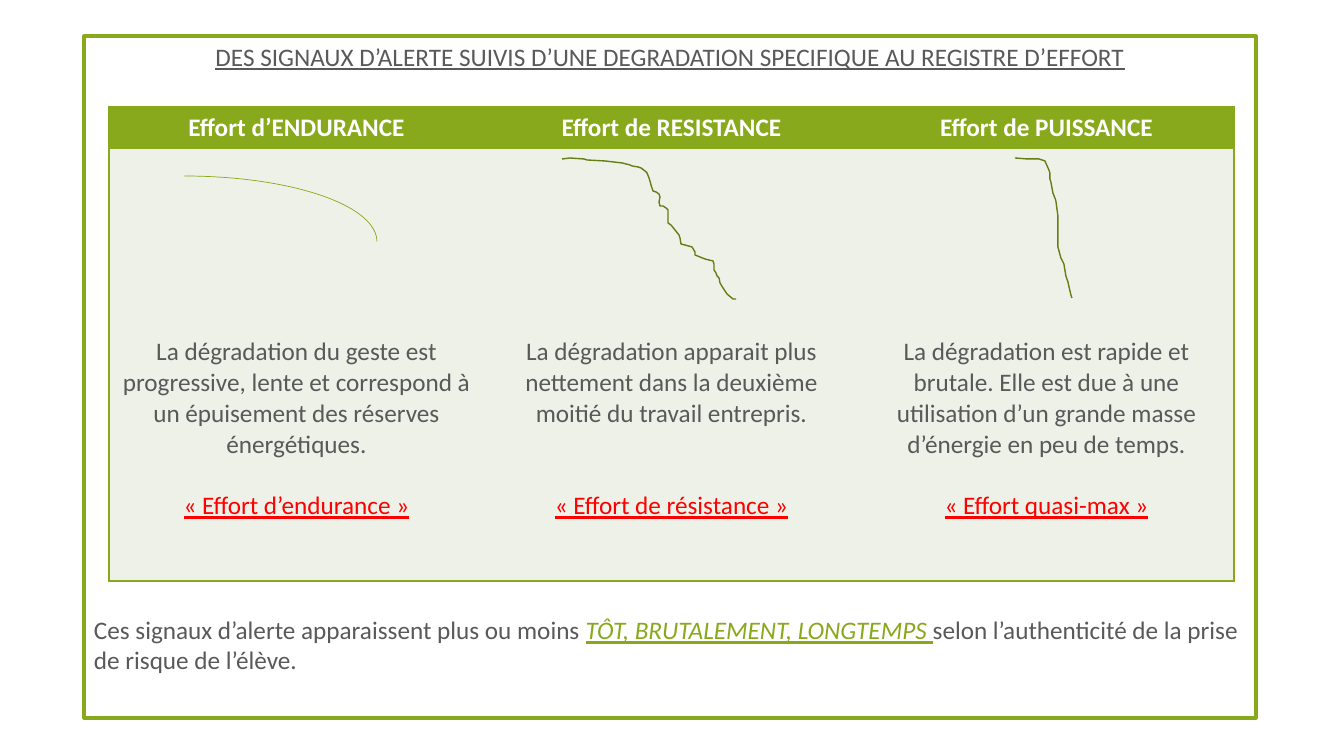
from lxml import etree
from pptx import Presentation
from pptx.dml.color import RGBColor
from pptx.enum.shapes import MSO_SHAPE
from pptx.enum.text import MSO_ANCHOR, PP_ALIGN
from pptx.oxml.ns import qn
from pptx.util import Emu, Pt

RECT, ARC = MSO_SHAPE.RECTANGLE, MSO_SHAPE.ARC
TOP = MSO_ANCHOR.TOP
LEFT, MID = PP_ALIGN.LEFT, PP_ALIGN.CENTER

GREEN = RGBColor(0x87, 0xA9, 0x1B)
DARK = RGBColor(0x64, 0x7D, 0x14)
PALE = RGBColor(0xED, 0xF1, 0xE8)
GREY = RGBColor(0x59, 0x59, 0x59)
RED = RGBColor(0xFF, 0x00, 0x00)
WHITE = RGBColor(0xFF, 0xFF, 0xFF)

SCALE = 914400 / 100.8
FRAME = (84, 36, 1172, 682)
GRID = (109, 107, 1125, 474)
HEAD = 41

TITLE = "DES SIGNAUX D’ALERTE SUIVIS D’UNE DEGRADATION SPECIFIQUE AU REGISTRE D’EFFORT"
CLOSE = ("Ces signaux d’alerte apparaissent plus ou moins ",
         "TÔT, BRUTALEMENT, LONGTEMPS ",
         "selon l’authenticité de la prise de risque de l’élève.")

# Heading, description, label, points between description and label
EFFORTS = [
    ("Effort d’ENDURANCE",
     "La dégradation du geste est progressive, lente et correspond à un "
     "épuisement des réserves énergétiques.",
     "« Effort d’endurance »", 22),
    ("Effort de RESISTANCE",
     "La dégradation apparait plus nettement dans la deuxième moitié du "
     "travail entrepris.",
     "« Effort de résistance »", 44),
    ("Effort de PUISSANCE",
     "La dégradation est rapide et brutale. Elle est due à une utilisation "
     "d’un grande masse d’énergie en peu de temps.",
     "« Effort quasi-max »", 22),
]

# Curve points, from the top left corner of each curve
STEPS = [
    (0, 1), (8, 0), (22, 1), (25, 2), (43, 3), (60, 5), (68, 7), (70, 8),
    (76, 9), (79, 10), (83, 13), (85, 15), (87, 20), (88, 23), (89, 27),
    (91, 33), (94, 34), (97, 36), (98, 39), (97, 44), (98, 48), (101, 48),
    (104, 50), (106, 52), (106, 58), (106, 65), (109, 67), (113, 72),
    (117, 77), (118, 80), (119, 86), (123, 87), (130, 89), (133, 94),
    (133, 97), (143, 101), (151, 103), (152, 106), (152, 112), (154, 115),
    (155, 118), (157, 120), (158, 125), (161, 130), (165, 136), (171, 141),
    (174, 141),
]
DROP = [
    (0, 0), (12, 1), (24, 1), (30, 3), (34, 12), (35, 15), (35, 21), (36, 24),
    (38, 35), (40, 40), (41, 43), (43, 58), (43, 89), (46, 100), (49, 106),
    (50, 112), (51, 118), (53, 124), (56, 137), (57, 140),
]


def px(n):
    return Emu(round(n * SCALE))


def style(run, color, bold=False, under=False, slant=False):
    font = run.font
    font.name, font.size = "Calibri", Pt(18)
    font.color.rgb = color
    font.bold, font.underline, font.italic = bold, under, slant


def trace(shape, color, width):
    shape.shadow.inherit = False
    shape.fill.background()
    shape.line.color.rgb = color
    shape.line.width = Pt(width)


def border(cell, sides):
    props = cell._tc.get_or_add_tcPr()
    for side in "LRTB":
        line = etree.SubElement(props, qn("a:ln" + side), w=str(Pt(1)))
        if side in sides:
            fill = etree.SubElement(line, qn("a:solidFill"))
            etree.SubElement(fill, qn("a:srgbClr"), val=str(GREEN))
        else:
            etree.SubElement(line, qn("a:noFill"))


def add_frame(slide, box):
    frame = slide.shapes.add_shape(RECT, *map(px, box))
    trace(frame, GREEN, 2.25)
    text = frame.text_frame
    text.word_wrap = True
    text.vertical_anchor = TOP
    # Title
    title = text.paragraphs[0]
    title.text = TITLE
    title.alignment = MID
    style(title.runs[0], GREY, under=True)
    # Closing sentence
    end = text.add_paragraph()
    end.alignment = LEFT
    end.space_before = Pt(388)
    for i, part in enumerate(CLOSE):
        run = end.add_run()
        run.text = part
        key = i == 1
        style(run, GREEN if key else GREY, under=key, slant=key)


def add_grid(slide, box):
    table = slide.shapes.add_table(2, len(EFFORTS), *map(px, box)).table
    table.rows[0].height = px(HEAD)
    table.rows[1].height = px(box[3] - HEAD)
    last = len(EFFORTS) - 1
    for i, (name, body, label, gap) in enumerate(EFFORTS):
        sides = "TB" + "L" * (i == 0) + "R" * (i == last)
        head, cell = table.cell(0, i), table.cell(1, i)
        for part, color in ((head, GREEN), (cell, PALE)):
            border(part, sides)
            part.fill.solid()
            part.fill.fore_color.rgb = color
        # Heading
        head.text_frame.text = name
        style(head.text_frame.paragraphs[0].runs[0], WHITE, bold=True)
        # Description and label, below the room for the curve
        cell.margin_top = px(189)
        text = cell.text_frame
        text.text = body
        style(text.paragraphs[0].runs[0], GREY)
        tag = text.add_paragraph()
        tag.text = label
        tag.space_before = Pt(gap)
        style(tag.runs[0], RED, under=True)
        for para in (*head.text_frame.paragraphs, *text.paragraphs):
            para.alignment = MID


def add_curve(slide, x, y, points):
    spots = [(x + dx, y + dy) for dx, dy in points]
    path = slide.shapes.build_freeform(*spots[0], scale=SCALE)
    path.add_line_segments(spots[1:], close=False)
    trace(path.convert_to_shape(), DARK, 1)


def add_curves(slide, box):
    x, y, wide, _ = box
    col, top = wide // len(EFFORTS), y + HEAD
    arc = slide.shapes.add_shape(ARC, px(x - 117), px(top + 28), px(385), px(131))
    trace(arc, GREEN, 0.5)
    add_curve(slide, x + col + 78, top + 10, STEPS)
    add_curve(slide, x + 2 * col + 156, top + 10, DROP)


def main():
    deck = Presentation()
    deck.slide_width, deck.slide_height = px(1344), px(756)
    slide = deck.slides.add_slide(deck.slide_layouts[6])
    add_frame(slide, FRAME)
    add_grid(slide, GRID)
    add_curves(slide, GRID)
    deck.save("out.pptx")


if __name__ == "__main__":
    main()
